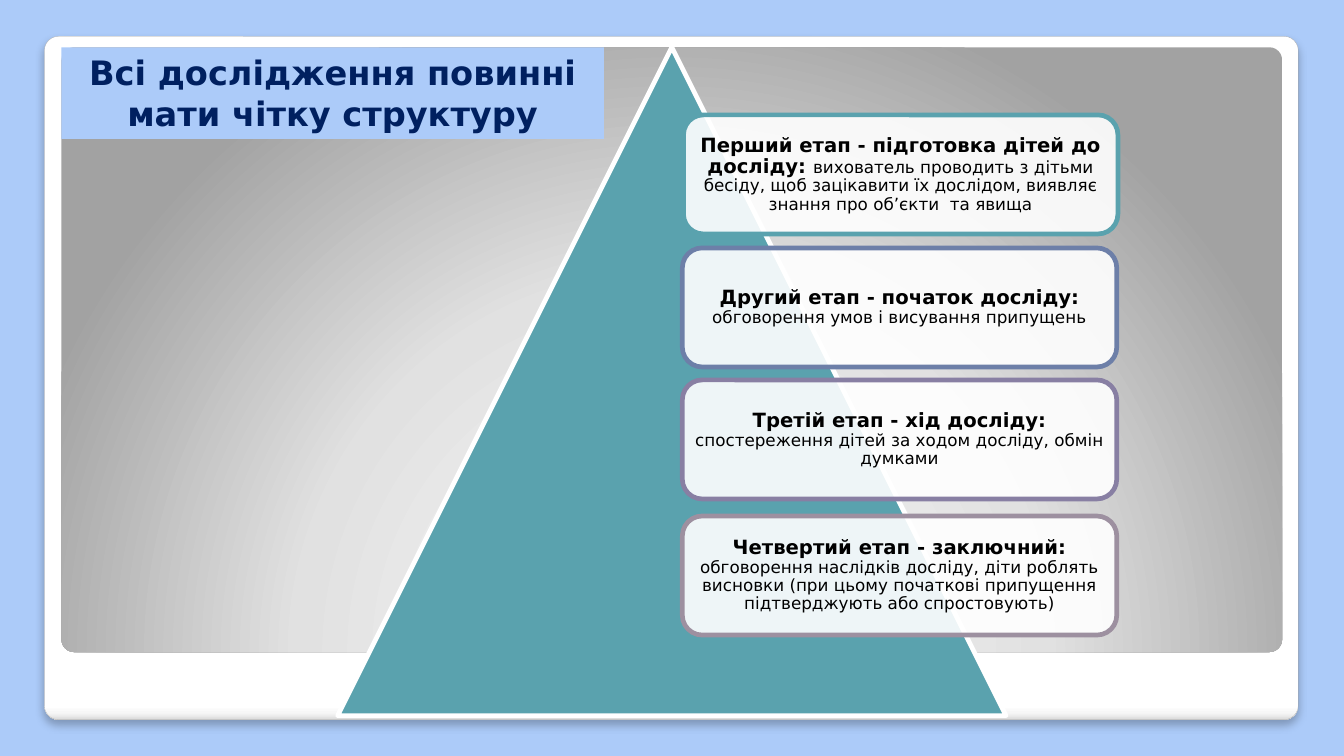
from dataclasses import dataclass

from lxml.etree import SubElement
from pptx import Presentation
from pptx.dml.color import RGBColor
from pptx.enum.shapes import MSO_SHAPE
from pptx.enum.text import MSO_ANCHOR, PP_ALIGN
from pptx.oxml import parse_xml
from pptx.oxml.ns import nsdecls, qn
from pptx.shapes.autoshape import Shape
from pptx.util import Pt

FONT = "DejaVu Sans"
SKY = RGBColor(0xAC, 0xCB, 0xF9)
NAVY = RGBColor(0x00, 0x20, 0x60)
BLACK = RGBColor(0x00, 0x00, 0x00)
WHITE = RGBColor(0xFF, 0xFF, 0xFF)
SILVER = RGBColor(0xF7, 0xF7, 0xF7)
LIGHT_GRAY = RGBColor(0xE1, 0xE1, 0xE1)
PALE_GRAY = RGBColor(0xDA, 0xDA, 0xDA)
GRAY = RGBColor(0xA2, 0xA2, 0xA2)
EDGE_GRAY = RGBColor(0xA4, 0xA4, 0xA4)
TEAL = RGBColor(0x5A, 0xA2, 0xAE)
BLUE = RGBColor(0x6D, 0x7F, 0xA8)
VIOLET = RGBColor(0x88, 0x7F, 0xA3)
MAUVE = RGBColor(0x9D, 0x90, 0xA0)

OUTLINE = 3.35
CARD_WIDTH, CARD_HEIGHT = 310.3, 85
DOWNWARD = '<a:lin ang="5400000" scaled="0"/>'
FROM_BELOW = ('<a:path path="circle">'
              '<a:fillToRect l="50000" t="175000" r="50000" b="-75000"/></a:path>')


@dataclass(frozen=True)
class Stage:
    left: float
    top: float
    color: RGBColor
    heading: str
    body: str


STAGES = [
    Stage(488.2, 82.1, TEAL, "Перший етап - підготовка дітей до досліду: ",
          "вихователь проводить з дітьми бесіду, щоб зацікавити їх дослідом, "
          "виявляє знання про об’єкти  та явища"),
    Stage(487.4, 177.1, BLUE, "Другий етап - початок досліду: ",
          "обговорення умов і висування припущень"),
    Stage(487.4, 271.4, VIOLET, "Третій етап - хід досліду: ",
          "спостереження дітей за ходом досліду, обмін думками"),
    Stage(487.4, 368.6, MAUVE, "Четвертий етап - заключний: ",
          "обговорення наслідків досліду, діти роблять висновки "
          "(при цьому початкові припущення підтверджують або спростовують)"),
]


def add_box(page, kind: MSO_SHAPE, left: float, top: float, width: float, height: float,
            fill: RGBColor, line: RGBColor | None = None, weight: float = OUTLINE) -> Shape:
    box = page.shapes.add_shape(kind, Pt(left), Pt(top), Pt(width), Pt(height))
    box.shadow.inherit = False
    box.fill.solid()
    box.fill.fore_color.rgb = fill
    if line is None:
        box.line.fill.background()
    else:
        box.line.color.rgb = line
        box.line.width = Pt(weight)
    return box


def set_gradient(box: Shape, stops: list[tuple[int, RGBColor]], direction: str) -> None:
    marks = "".join(f'<a:gs pos="{place * 1000}"><a:srgbClr val="{color}"/></a:gs>'
                    for place, color in stops)
    gradient = parse_xml(f'<a:gradFill {nsdecls("a")} rotWithShape="1">'
                         f'<a:gsLst>{marks}</a:gsLst>{direction}</a:gradFill>')
    properties = box._element.spPr
    properties.replace(properties.find(qn("a:solidFill")), gradient)


def add_shadow(box: Shape) -> None:
    effects = box._element.spPr.find(qn("a:effectLst"))
    effects.append(parse_xml(
        f'<a:outerShdw {nsdecls("a")} blurRad="{Pt(6)}" dist="{Pt(4)}" dir="5400000" '
        'algn="t" rotWithShape="0"><a:srgbClr val="000000">'
        '<a:alpha val="25000"/></a:srgbClr></a:outerShdw>'))


def set_opacity(box: Shape, percent: int) -> None:
    color = box._element.spPr.find(qn("a:solidFill")).find(qn("a:srgbClr"))
    SubElement(color, qn("a:alpha")).set("val", str(percent * 1000))


def add_span(para, text: str, *, size: float, color: RGBColor = BLACK,
             bold: bool = False) -> None:
    span = para.add_run()
    span.text = text
    span.font.name = FONT
    span.font.size = Pt(size)
    span.font.bold = bold
    span.font.color.rgb = color


def add_stage(page, stage: Stage) -> None:
    box = add_box(page, MSO_SHAPE.ROUNDED_RECTANGLE, stage.left, stage.top,
                  CARD_WIDTH, CARD_HEIGHT, WHITE, stage.color)
    set_opacity(box, 90)
    frame = box.text_frame
    frame.word_wrap = True
    frame.vertical_anchor = MSO_ANCHOR.MIDDLE
    frame.margin_left = frame.margin_right = Pt(4)
    frame.margin_top = frame.margin_bottom = Pt(4)
    para = frame.paragraphs[0]
    para.alignment = PP_ALIGN.CENTER
    para.line_spacing = 0.9
    add_span(para, stage.heading, size=14, bold=True)
    add_span(para, stage.body, size=12)


def main() -> None:
    deck = Presentation()
    deck.slide_width, deck.slide_height = Pt(960), Pt(540)
    page = deck.slides.add_slide(deck.slide_layouts[6])
    page.background.fill.solid()
    page.background.fill.fore_color.rgb = SKY

    # White frame and gray panel
    frame = add_box(page, MSO_SHAPE.ROUNDED_RECTANGLE, 31.7, 25.9, 895.7, 488.2,
                    WHITE, EDGE_GRAY, 0.16)
    set_gradient(frame, [(0, WHITE), (98, WHITE), (99, SILVER), (100, PALE_GRAY)], DOWNWARD)
    add_shadow(frame)
    panel = add_box(page, MSO_SHAPE.ROUNDED_RECTANGLE, 43.9, 33.8, 871.9, 432, WHITE)
    set_gradient(panel, [(0, WHITE), (55, LIGHT_GRAY), (100, GRAY)], FROM_BELOW)
    for box in (frame, panel):
        box.adjustments[0] = 0.021

    # Title
    title = add_box(page, MSO_SHAPE.RECTANGLE, 43.9, 33.8, 387.4, 65.5, SKY)
    title.text_frame.word_wrap = True
    title.text_frame.vertical_anchor = MSO_ANCHOR.TOP
    para = title.text_frame.paragraphs[0]
    para.alignment = PP_ALIGN.CENTER
    add_span(para, "Всі дослідження повинні мати чітку структуру",
             size=24, color=NAVY, bold=True)

    # Pyramid with its stages
    add_box(page, MSO_SHAPE.ISOSCELES_TRIANGLE, 241.2, 33.8, 477.4, 477.4, TEAL, WHITE)
    for stage in STAGES:
        add_stage(page, stage)

    deck.save("out.pptx")


if __name__ == "__main__":
    main()
